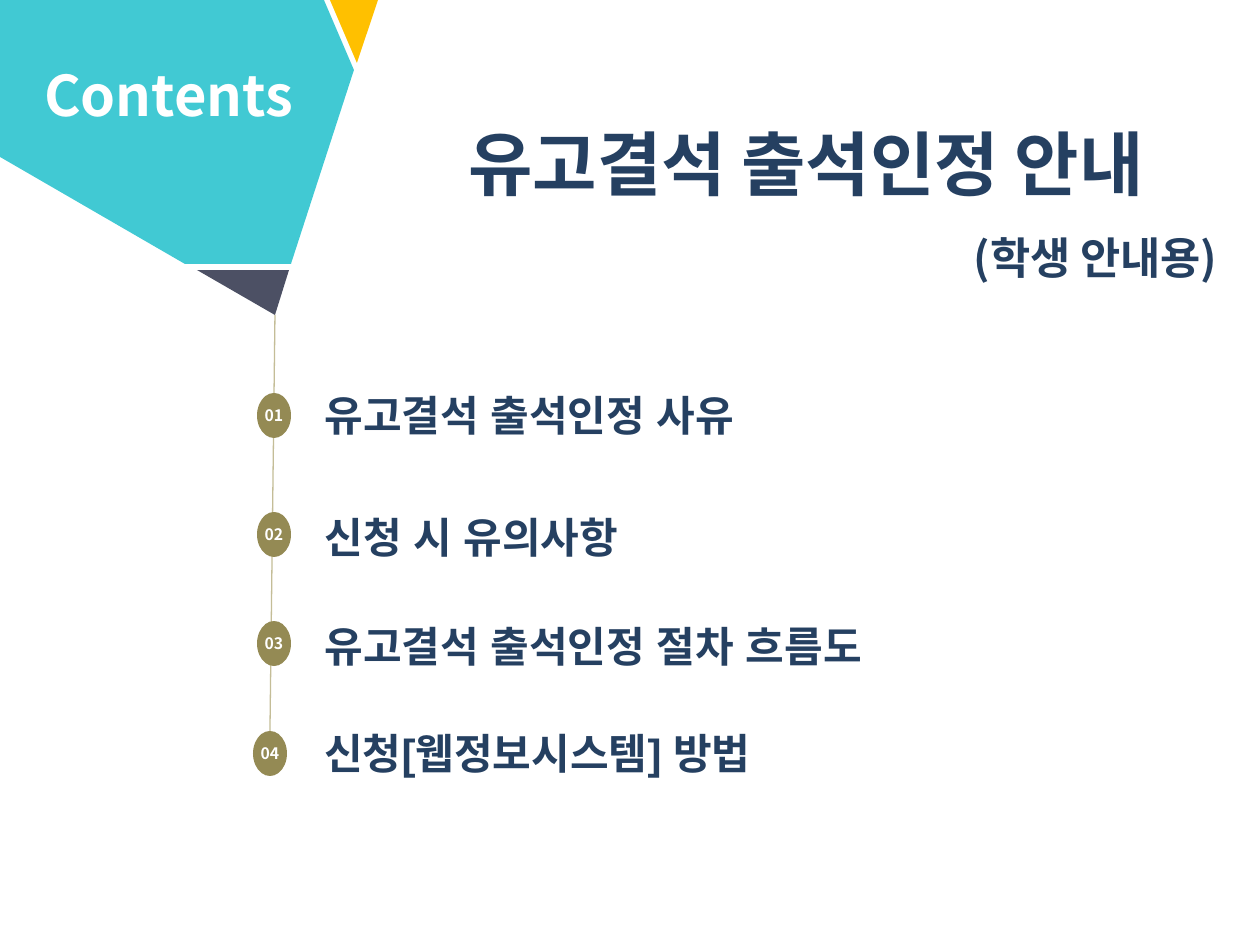
from lxml import etree
from pptx import Presentation
from pptx import util as u
from pptx.dml.color import RGBColor
from pptx.enum import shapes, text
from pptx.oxml import ns

SCALE = 914400 / 126  # EMU per px
TURQUOISE = RGBColor(0x41, 0xC9, 0xD3)
AMBER = RGBColor(0xFF, 0xC0, 0x00)
SLATE = RGBColor(0x4C, 0x50, 0x64)
OLIVE = RGBColor(0x94, 0x8A, 0x54)
SAND = RGBColor(0xC4, 0xBD, 0x97)
NAVY = RGBColor(0x25, 0x40, 0x61)
WHITE = RGBColor(0xFF, 0xFF, 0xFF)
NOTO = "Noto Sans CJK KR"
TITLE_ONLY = 5

# Fragments of the corner ornament, relative to its box
FRAGMENTS = [
    (AMBER, [(330, 0), (378, 0), (357, 63)]),
    (TURQUOISE, [(0, 0), (324, 0), (354, 70), (291, 264), (185, 264), (0, 157)]),
    (SLATE, [(197, 270), (289, 270), (275, 315)]),
]
# Number, wording, badge left and top, wording top and width, relative to the list box
ENTRIES = [
    ("01", "유고결석 출석인정 사유", 4, 10, 0, 625),
    ("02", "신청 시 유의사항", 4, 129, 122, 903),
    ("03", "유고결석 출석인정 절차 흐름도", 4, 238, 231, 903),
    ("04", "신청[웹정보시스템] 방법", 0, 348, 338, 833),
]


def px(*lengths):
    return [u.Emu(round(length * SCALE)) for length in lengths]


def write(paragraph, words, size, color, font=NOTO, align=None):
    paragraph.alignment = align
    run = paragraph.add_run()
    run.text = words
    run.font.size = u.Pt(size)
    run.font.bold = True
    run.font.name = font
    run.font.color.rgb = color
    east_asian = etree.SubElement(run.font._element, ns.qn("a:ea"))
    east_asian.set("typeface", font)


def add_label(slide, box, words, size, color, font=NOTO, align=None):
    label = slide.shapes.add_textbox(*px(*box))
    label.text_frame.word_wrap = True
    label.text_frame.auto_size = text.MSO_AUTO_SIZE.SHAPE_TO_FIT_TEXT
    write(label.text_frame.paragraphs[0], words, size, color, font, align)


def add_corner(slide, left, top):
    """Ornament of three fragments with the word Contents."""
    ornament = slide.shapes.add_group_shape()
    for color, corners in FRAGMENTS:
        points = [(left + x, top + y) for x, y in corners]
        builder = ornament.shapes.build_freeform(*points[0], scale=SCALE)
        builder.add_line_segments(points[1:], close=True)
        fragment = builder.convert_to_shape()
        fragment.shadow.inherit = False
        fragment.fill.solid()
        fragment.fill.fore_color.rgb = color
        fragment.line.fill.background()
    add_label(slide, (left + 5, top + 54, 328, 81), "Contents", 32, WHITE,
              align=text.PP_ALIGN.CENTER)


def add_heading(slide, *box):
    """Title with its subtitle line."""
    heading = slide.shapes.title
    heading.left, heading.top, heading.width, heading.height = px(*box)
    frame = heading.text_frame
    frame.word_wrap = True
    frame.auto_size = text.MSO_AUTO_SIZE.NONE
    frame.vertical_anchor = text.MSO_ANCHOR.TOP
    title, subtitle = frame.paragraphs[0], frame.add_paragraph()
    title.line_spacing = subtitle.line_spacing = 1.5
    write(title, "유고결석 출석인정 안내", 40, NAVY, align=text.PP_ALIGN.CENTER)
    write(subtitle, "(학생 안내용)", 25, NAVY, align=text.PP_ALIGN.RIGHT)


def add_badge(slide, left, top, number):
    badge = slide.shapes.add_shape(shapes.MSO_SHAPE.OVAL, *px(left, top, 34, 45))
    badge.shadow.inherit = False
    badge.fill.solid()
    badge.fill.fore_color.rgb = OLIVE
    badge.line.fill.background()
    frame = badge.text_frame
    frame.margin_left = frame.margin_right = frame.margin_top = frame.margin_bottom = 0
    frame.vertical_anchor = text.MSO_ANCHOR.MIDDLE
    write(frame.paragraphs[0], number, 9, WHITE, align=text.PP_ALIGN.CENTER)
    return badge


def add_contents(slide, left, top):
    """Numbered entries strung on a thread."""
    thread = slide.shapes.add_connector(
        shapes.MSO_CONNECTOR.STRAIGHT,
        *px(left + 22, top - 68, left + 17, top + 348))
    thread.line.color.rgb = SAND
    thread.line.width = u.Pt(0.75)
    etree.SubElement(thread._element.spPr, ns.qn("a:effectLst"))
    for number, words, badge_x, badge_y, words_y, width in ENTRIES:
        badge = add_badge(slide, left + badge_x, top + badge_y, number)
        add_label(slide, (left + 59, top + words_y, width, 63), words, 24, NAVY, "Arial")
    thread.end_connect(badge, 0)  # the last badge closes the thread


def main():
    deck = Presentation()
    deck.slide_width, deck.slide_height = px(1260, 945)
    slide = deck.slides.add_slide(deck.slide_layouts[TITLE_ONLY])
    add_contents(slide, 253, 383)
    add_corner(slide, 0, 0)
    add_heading(slide, 382, 72, 848, 232)
    deck.save("out.pptx")


if __name__ == "__main__":
    main()
